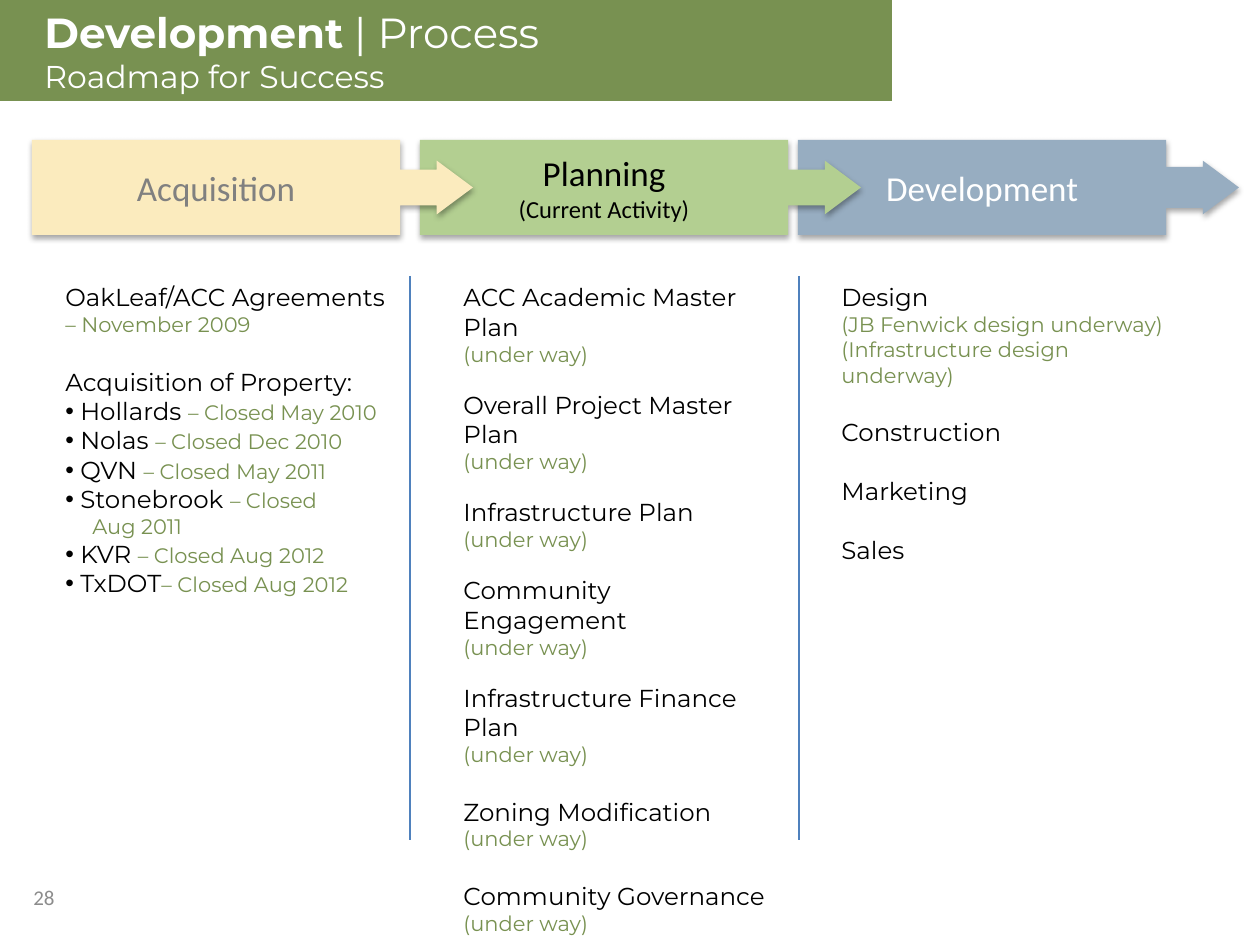
from lxml.etree import SubElement
from pptx import Presentation
from pptx.dml.color import RGBColor
from pptx.enum.shapes import MSO_CONNECTOR, MSO_SHAPE
from pptx.enum.text import MSO_ANCHOR, PP_ALIGN
from pptx.oxml.ns import qn
from pptx.util import Emu, Pt

PX_PER_INCH = 126
HEADING_FONT, LABEL_FONT = "Montserrat", "Calibri"
WHITE = RGBColor(0xFF, 0xFF, 0xFF)
BLACK = RGBColor(0x00, 0x00, 0x00)
OLIVE = RGBColor(0x78, 0x91, 0x51)
CREAM = RGBColor(0xFB, 0xEB, 0xBE)
LIGHT_GREEN = RGBColor(0xB3, 0xCF, 0x91)
SLATE = RGBColor(0x97, 0xAD, 0xC1)
GRAY = RGBColor(0x80, 0x80, 0x80)
NUMBER_GRAY = RGBColor(0x8C, 0x8C, 0x8C)
RULE_BLUE = RGBColor(0x4F, 0x81, 0xBD)

STEP_TOP, STEP_WIDTH, STEP_HEIGHT = 140, 441, 95
COLUMN_TOP, COLUMN_BOTTOM = 276, 840
BULLET_INDENT, CONTINUED_INDENT = 15, 27
ITEM_SIZE, NOTE_SIZE = 14, 12
WIDE_GAP, NARROW_GAP = 17, 13.4

# Each step: left, arrow shaft, fill, text colour, lines of (text, size)
STEPS = [
    (798, 0.432, SLATE, WHITE, [("Development", 20)]),
    (420, 0.376, LIGHT_GREEN, BLACK, [("Planning", 20), ("(Current Activity)", 14)]),
    (32, 0.376, CREAM, GRAY, [("Acquisition", 20)]),
]
CLOSINGS = [
    ("Hollards ", "– Closed May 2010"),
    ("Nolas ", "– Closed Dec 2010"),
    ("QVN ", "– Closed May 2011"),
    ("Stonebrook ", "– Closed"),
    ("KVR ", "– Closed Aug 2012"),
    ("TxDOT", "– Closed Aug 2012"),
]
# Each plan: name, gap before it
PLANS = [
    ("ACC Academic Master Plan", 0),
    ("Overall Project Master Plan", NARROW_GAP),
    ("Infrastructure Plan", NARROW_GAP),
    ("Community Engagement", NARROW_GAP),
    ("Infrastructure Finance Plan", NARROW_GAP),
    ("Zoning Modification", WIDE_GAP),
    ("Community Governance", WIDE_GAP),
]


def px(length):
    return Emu(round(length * 914400 / PX_PER_INCH))


def set_font(font, name, size, color):
    font.name, font.size = name, Pt(size)
    font.color.rgb = color


def add_text_box(slide, left, top, width, height):
    box = slide.shapes.add_textbox(px(left), px(top), px(width), px(height))
    box.text_frame.word_wrap = True
    return box.text_frame


def next_paragraph(frame):
    """Return the first paragraph while the frame is empty, else a new one."""
    first = frame.paragraphs[0]
    return frame.add_paragraph() if first.runs else first


def add_line(frame, text, size, color, font=HEADING_FONT, gap=0):
    line = next_paragraph(frame)
    line.add_run().text = text
    if gap:
        line.space_before = Pt(gap)
    set_font(line.font, font, size, color)
    return line


def add_item(frame, text, gap=0):
    return add_line(frame, text, ITEM_SIZE, BLACK, gap=gap)


def add_note(frame, text):
    return add_line(frame, text, NOTE_SIZE, OLIVE)


def indent(paragraph, margin, first_line=0):
    properties = paragraph._p.get_or_add_pPr()
    properties.set("marL", str(px(margin)))
    properties.set("indent", str(px(first_line)))
    return properties


def add_closing(frame, owner, status):
    closing = next_paragraph(frame)
    properties = indent(closing, BULLET_INDENT, -BULLET_INDENT)
    SubElement(properties, qn("a:buFont"), typeface="Arial")
    SubElement(properties, qn("a:buChar"), char="•")
    for text, size, color in ((owner, ITEM_SIZE, BLACK), (status, NOTE_SIZE, OLIVE)):
        run = closing.add_run()
        run.text = text
        set_font(run.font, HEADING_FONT, size, color)


def add_soft_shadow(shape):
    shape.shadow.inherit = False
    effects = shape._element.spPr.find(qn("a:effectLst"))
    shadow = SubElement(effects, qn("a:outerShdw"), blurRad=str(Pt(3.1)),
                        dist=str(Pt(1.8)), dir="5400000", rotWithShape="0")
    color = SubElement(shadow, qn("a:srgbClr"), val=str(BLACK))
    SubElement(color, qn("a:alpha"), val="35000")


def add_step(slide, left, shaft, fill, text_color, lines):
    step = slide.shapes.add_shape(MSO_SHAPE.RIGHT_ARROW_CALLOUT, px(left), px(STEP_TOP),
                                  px(STEP_WIDTH), px(STEP_HEIGHT))
    for index, value in enumerate((shaft, 0.283, 0.381, 0.835)):
        step.adjustments[index] = value
    step.fill.solid()
    step.fill.fore_color.rgb = fill
    step.line.fill.background()
    add_soft_shadow(step)
    step.text_frame.vertical_anchor = MSO_ANCHOR.MIDDLE
    for text, size in lines:
        label = add_line(step.text_frame, text, size, text_color, LABEL_FONT)
        label.alignment = PP_ALIGN.CENTER


def add_divider(slide, x):
    divider = slide.shapes.add_connector(MSO_CONNECTOR.STRAIGHT, px(x), px(COLUMN_TOP),
                                         px(x), px(COLUMN_BOTTOM))
    divider.line.color.rgb = RULE_BLUE
    divider.line.width = Pt(0.75)
    SubElement(divider._element.spPr, qn("a:effectLst"))


def add_header(slide):
    banner = slide.shapes.add_shape(MSO_SHAPE.RECTANGLE, 0, 0, px(892), px(101))
    banner.fill.solid()
    banner.fill.fore_color.rgb = OLIVE
    banner.line.fill.background()
    banner.shadow.inherit = False

    title = add_text_box(slide, 32, 0, 1134, 158)
    heading = add_line(title, "Development", 24, WHITE)
    heading.runs[0].font.bold = True
    heading.add_run().text = " | Process"
    add_line(title, "Roadmap for Success", 18, WHITE)


def add_acquisition(slide):
    column = add_text_box(slide, 53, COLUMN_TOP, 378, 386)
    add_item(column, "OakLeaf/ACC Agreements")
    add_note(column, "– November 2009")
    add_item(column, "Acquisition of Property:", WIDE_GAP)
    for owner, status in CLOSINGS:
        add_closing(column, owner, status)
        if status == "– Closed":
            indent(add_note(column, "Aug 2011"), CONTINUED_INDENT)


def add_planning(slide):
    column = add_text_box(slide, 451, COLUMN_TOP, 336, 575)
    for plan, gap in PLANS:
        add_item(column, plan, gap)
        add_note(column, "(under way)")


def add_development(slide):
    column = add_text_box(slide, 829, COLUMN_TOP, 368, 420)
    add_item(column, "Design")
    add_note(column, "(JB Fenwick design underway)")
    add_note(column, "(Infrastructure design underway)")
    for stage in ("Construction", "Marketing", "Sales"):
        add_item(column, stage, WIDE_GAP)


def main():
    presentation = Presentation()
    presentation.slide_width, presentation.slide_height = px(1260), px(945)
    slide = presentation.slides.add_slide(presentation.slide_layouts[6])
    add_header(slide)
    page_number = add_text_box(slide, 21, 872, 305, 50)
    page_number.vertical_anchor = MSO_ANCHOR.MIDDLE
    add_line(page_number, "28", 12, NUMBER_GRAY, LABEL_FONT)
    for step in STEPS:
        add_step(slide, *step)
    add_acquisition(slide)
    add_planning(slide)
    add_development(slide)
    for x in (410, 799):
        add_divider(slide, x)
    presentation.save("out.pptx")


if __name__ == "__main__":
    main()
